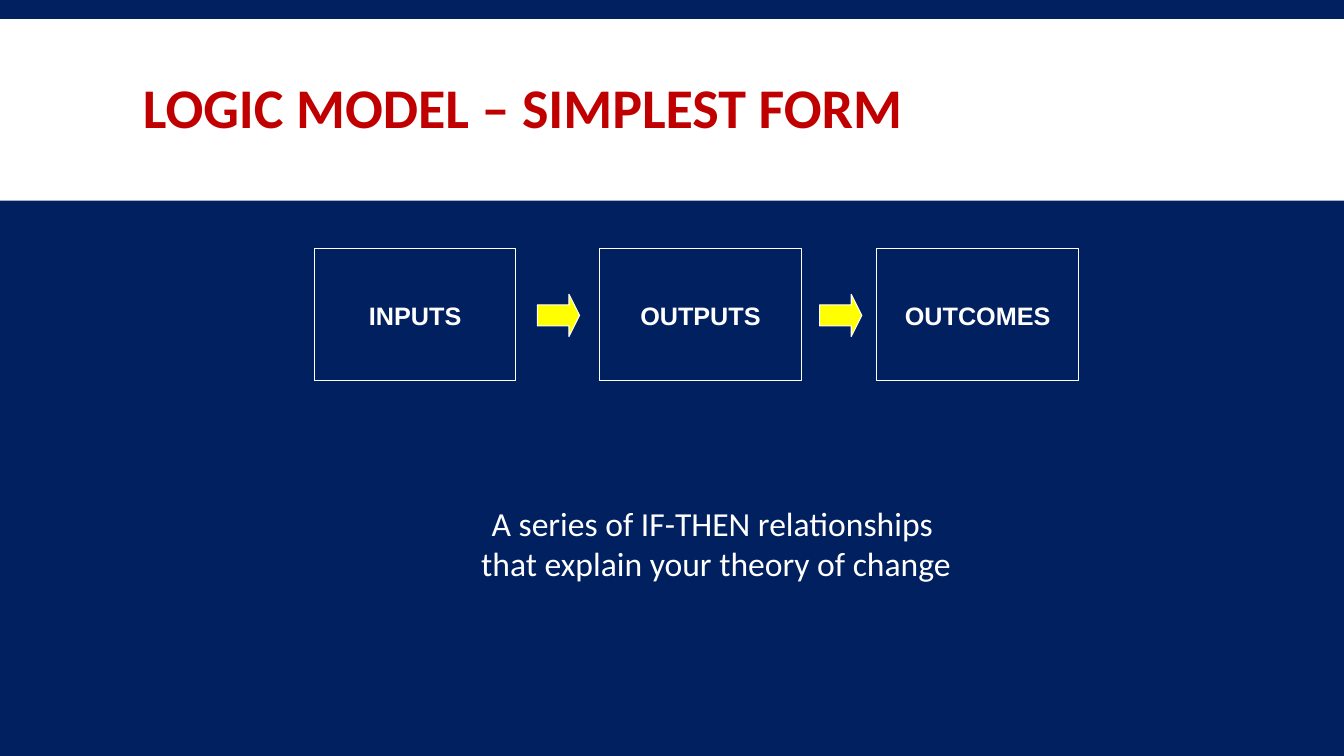
from dataclasses import dataclass

from pptx import Presentation
from pptx.dml.color import RGBColor
from pptx.enum import shapes, text
from pptx.util import Pt


@dataclass(frozen=True)
class Theme:
    navy: RGBColor = RGBColor(0x00, 0x20, 0x60)
    white: RGBColor = RGBColor(0xFF, 0xFF, 0xFF)
    red: RGBColor = RGBColor(0xC0, 0x00, 0x00)
    yellow: RGBColor = RGBColor(0xFF, 0xFF, 0x00)
    heading_font: str = "Calibri"
    box_font: str = "Arial"
    title_size: int = 40
    caption_size: int = 24
    box_size: int = 18
    line_width: float = 0.75


class SlideBuilder:
    def __init__(self, slide, theme):
        self.slide = slide
        self.theme = theme
        background = slide.background.fill
        background.solid()
        background.fore_color.rgb = theme.navy

    def shape(self, kind, left, top, width, height, fill=None, outlined=True):
        shape = self.slide.shapes.add_shape(
            kind, Pt(left), Pt(top), Pt(width), Pt(height))
        shape.shadow.inherit = False
        if fill is None:
            shape.fill.background()
        else:
            shape.fill.solid()
            shape.fill.fore_color.rgb = fill
        if outlined:
            shape.line.color.rgb = self.theme.white
            shape.line.width = Pt(self.theme.line_width)
        else:
            shape.line.fill.background()
        return shape

    def add_lines(self, frame, lines, font, size, color, bold=False,
                  align=text.PP_ALIGN.CENTER, spacing=None):
        frame.word_wrap = True
        frame.vertical_anchor = text.MSO_ANCHOR.MIDDLE
        for index, line in enumerate(lines):
            paragraph = frame.paragraphs[0] if index == 0 else frame.add_paragraph()
            paragraph.alignment = align
            paragraph.line_spacing = spacing
            run = paragraph.add_run()
            run.text = line
            run.font.name = font
            run.font.size = Pt(size)
            run.font.bold = bold
            run.font.color.rgb = color

    def band(self, top, width, height):
        self.shape(shapes.MSO_SHAPE.RECTANGLE, 0, top, width, height,
                   self.theme.white, outlined=False)

    def stage(self, label, left, top, width, height):
        box = self.shape(shapes.MSO_SHAPE.RECTANGLE, left, top, width, height)
        self.add_lines(box.text_frame, [label], self.theme.box_font,
                       self.theme.box_size, self.theme.white, bold=True)

    def arrow(self, left, top, side):
        arrow = self.shape(shapes.MSO_SHAPE.RIGHT_ARROW, left, top, side, side,
                           self.theme.yellow)
        arrow.adjustments[0] = 0.5
        arrow.adjustments[1] = 0.25

    def text_box(self, left, top, width, height, lines, **style):
        box = self.slide.shapes.add_textbox(
            Pt(left), Pt(top), Pt(width), Pt(height))
        self.add_lines(box.text_frame, lines, self.theme.heading_font, **style)


def main():
    theme = Theme()
    deck = Presentation()
    deck.slide_width, deck.slide_height = Pt(960), Pt(540)
    builder = SlideBuilder(deck.slides.add_slide(deck.slide_layouts[6]), theme)

    builder.band(13.7, 960, 129.6)
    stages = (("INPUTS", 224.6), ("OUTPUTS", 428.4), ("OUTCOMES", 626.4))
    for label, left in stages:
        builder.stage(label, left, 177.8, 144, 94.3)
    for left in (383.8, 585.4):
        builder.arrow(left, 210.2, 30.2)

    builder.text_box(95, 20.2, 770.4, 118.8, ["LOGIC MODEL – SIMPLEST FORM"],
                     size=theme.title_size, color=theme.red, bold=True,
                     align=text.PP_ALIGN.LEFT, spacing=0.85)
    builder.text_box(253.4, 355, 516.2, 65.5,
                     ["A series of IF-THEN relationships ",
                      "that explain your theory of change"],
                     size=theme.caption_size, color=theme.white)
    deck.save("out.pptx")


if __name__ == "__main__":
    main()
